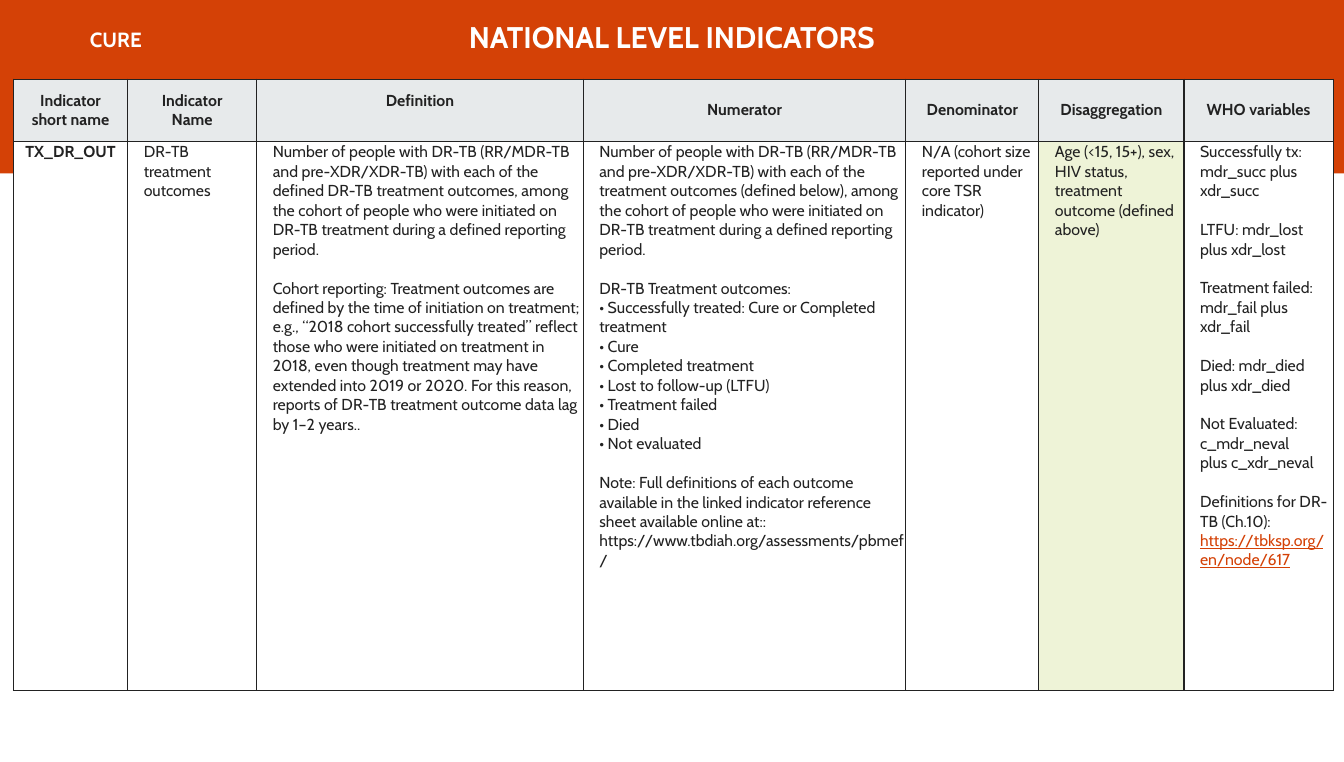
from lxml.etree import SubElement
from pptx import Presentation
from pptx.dml.color import RGBColor
from pptx.enum.shapes import MSO_SHAPE as Preset
from pptx.enum.text import MSO_ANCHOR as Anchor, PP_ALIGN as Align
from pptx.oxml.ns import qn
from pptx.util import Inches, Pt

UNIT = 0.1  # inches per grid column and per grid row
COLUMNS, ROWS = 100, 56.7
ORANGE, INK, WHITE = "D44106", "222222", "FFFFFF"
HEADER_FILL, GREEN_FILL = "E7EAEB", "EEF3D7"

HEADINGS = ["Indicator short name", "Indicator Name", "Definition", "Numerator",
            "Denominator", "Disaggregation", "WHO variables"]
COLUMN_WIDTHS = [8.5, 9.6, 24.3, 24, 9.9, 10.8, 11.1]
ROW_HEIGHTS = [4.6, 40.9]

# Each cell is a list of sections; the lines of a section are its paragraphs.
INDICATOR = [
    ["TX_DR_OUT"],
    ["DR-TB treatment outcomes"],
    ["Number of people with DR-TB (RR/MDR-TB and pre-XDR/XDR-TB) with each of the "
     "defined DR-TB treatment outcomes, among the cohort of people who were initiated "
     "on DR-TB treatment during a defined reporting period.",
     "Cohort reporting: Treatment outcomes are defined by the time of initiation on "
     "treatment; e.g., “2018 cohort successfully treated” reflect those who were "
     "initiated on treatment in 2018, even though treatment may have extended into "
     "2019 or 2020. For this reason, reports of DR-TB treatment outcome data lag by "
     "1–2 years.."],
    ["Number of people with DR-TB (RR/MDR-TB and pre-XDR/XDR-TB) with each of the "
     "treatment outcomes (defined below), among the cohort of people who were initiated "
     "on DR-TB treatment during a defined reporting period.",
     "DR-TB Treatment outcomes:\n"
     "• Successfully treated: Cure or Completed treatment\n"
     "• Cure\n"
     "• Completed treatment\n"
     "• Lost to follow-up (LTFU)\n"
     "• Treatment failed\n"
     "• Died\n"
     "• Not evaluated",
     "Note: Full definitions of each outcome available in the linked indicator reference "
     "sheet available online at:: https://www.tbdiah.org/assessments/pbmef/"],
    ["N/A (cohort size reported under core TSR indicator)"],
    ["Age (<15, 15+), sex, HIV status, treatment outcome (defined above)"],
    ["Successfully tx: mdr_succ plus xdr_succ",
     "LTFU: mdr_lost plus xdr_lost",
     "Treatment failed: mdr_fail plus xdr_fail",
     "Died: mdr_died plus xdr_died",
     "Not Evaluated: c_mdr_neval\nplus c_xdr_neval",
     "Definitions for DR-TB (Ch.10):\nhttps://tbksp.org/en/node/617"],
]


def color(hex_value):
    return RGBColor.from_string(hex_value)


def grid(count):
    return Inches(count * UNIT)


def apply(target, formats):
    for name, value in formats.items():
        setattr(target, name, value)


class IndicatorSlide:
    font_name = "Cabin"
    section_gap = Pt(10.35)

    def __init__(self, deck):
        self.slide = deck.slides.add_slide(deck.slide_layouts[6])
        self.shapes = self.slide.shapes

    def fill_text(self, frame, sections, size, ink, bold=False, align=Align.LEFT):
        """Fill a text frame, leaving a gap of one line between sections."""
        para = None
        for section in sections:
            for number, line in enumerate(section.split("\n")):
                first = para is None
                para = frame.paragraphs[0] if first else frame.add_paragraph()
                para.alignment = align
                if number == 0 and not first:
                    para.space_before = self.section_gap
                span = para.add_run()
                span.text = line
                is_link = line.startswith("https://")
                apply(span.font, {"name": self.font_name, "size": Pt(size), "bold": bold,
                                  "underline": is_link})
                span.font.color.rgb = color(ORANGE if is_link else ink)

    def band(self, left, top, width, height, fill):
        box = self.shapes.add_shape(Preset.RECTANGLE, *map(grid, (left, top, width, height)))
        box.shadow.inherit = False
        box.fill.solid()
        box.fill.fore_color.rgb = color(fill)
        box.line.fill.background()

    def label(self, left, top, width, height, text, size, align=Align.LEFT, wrap=True):
        box = self.shapes.add_textbox(*map(grid, (left, top, width, height)))
        box.text_frame.word_wrap = wrap
        self.fill_text(box.text_frame, [text], size, WHITE, bold=True, align=align)

    def border(self, cell):
        properties = cell._tc.get_or_add_tcPr()
        for side in ("lnL", "lnR", "lnT", "lnB"):
            line = SubElement(properties, qn(f"a:{side}"), w=str(Pt(0.75)))
            SubElement(SubElement(line, qn("a:solidFill")), qn("a:srgbClr"), val=INK)

    def cell(self, cell, sections, fill, margins, **text_style):
        self.border(cell)
        cell.fill.solid()
        cell.fill.fore_color.rgb = color(fill)
        apply(cell, margins)
        self.fill_text(cell.text_frame, sections, 8.5, INK, **text_style)

    def table(self, left, top):
        size = (sum(COLUMN_WIDTHS), sum(ROW_HEIGHTS))
        table = self.shapes.add_table(len(ROW_HEIGHTS), len(COLUMN_WIDTHS),
                                      *map(grid, (left, top, *size))).table
        table.horz_banding = False
        for column, width in zip(table.columns, COLUMN_WIDTHS):
            column.width = grid(width)
        for row, height in zip(table.rows, ROW_HEIGHTS):
            row.height = grid(height)
        for index, (heading, sections) in enumerate(zip(HEADINGS, INDICATOR)):
            is_short_name = index == 0
            raised = heading == "Definition"
            self.cell(table.cell(0, index), [heading], HEADER_FILL,
                      {"vertical_anchor": Anchor.MIDDLE,
                       "margin_bottom": grid(1.94 if raised else 0.5)},
                      bold=True, align=Align.CENTER)
            self.cell(table.cell(1, index), sections,
                      GREEN_FILL if heading == "Disaggregation" else WHITE,
                      {"vertical_anchor": Anchor.TOP,
                       "margin_left": grid(0.1 if is_short_name else 1.2),
                       "margin_right": grid(0.1), "margin_top": grid(0.1),
                       "margin_bottom": 0},
                      bold=is_short_name,
                      align=Align.CENTER if is_short_name else Align.LEFT)


def main():
    deck = Presentation()
    apply(deck, {"slide_width": grid(COLUMNS), "slide_height": grid(ROWS)})
    page = IndicatorSlide(deck)
    page.band(0, 0, COLUMNS, 12.9, ORANGE)
    page.label(30.3, 0.9, 39.4, 3.7, "NATIONAL LEVEL INDICATORS", 16, align=Align.CENTER)
    page.table(1, 5.9)
    page.label(5.7, 1.5, 6.5, 2.9, "CURE", 11, wrap=False)
    deck.save("out.pptx")


if __name__ == "__main__":
    main()
